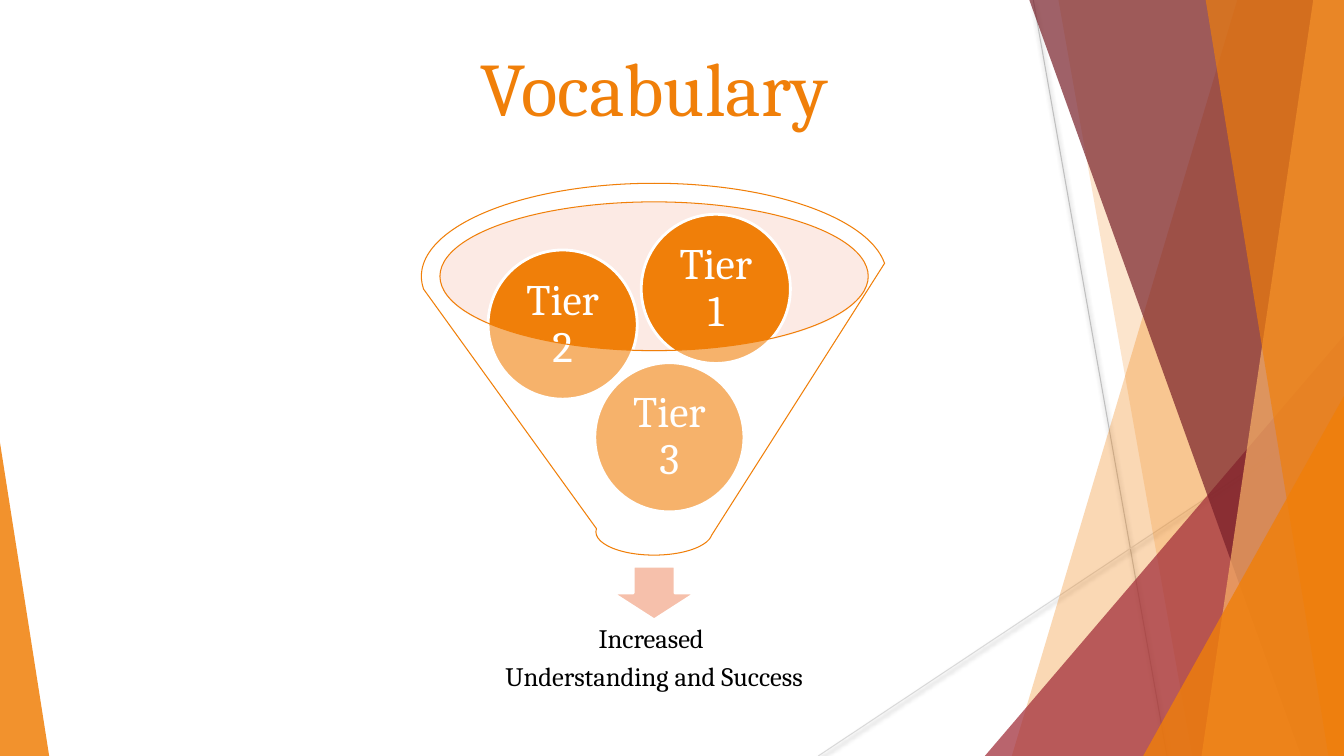
from lxml.etree import SubElement
from pptx import Presentation
from pptx.dml.color import RGBColor
from pptx.enum.shapes import MSO_CONNECTOR as LINE, MSO_SHAPE as SHAPE
from pptx.enum.text import MSO_ANCHOR as ANCHOR, PP_ALIGN as ALIGN
from pptx.oxml.ns import qn
from pptx.util import Cm, Pt

WIDTH, HEIGHT = 33.87, 19.05
FONT = "Cambria"
COLORS = {
    "orange": "F07F09", "peach": "F9B268", "red": "9F2936", "wine": "771F28",
    "blush": "F8CCBD", "arrow": "F6C0AB", "white": "FFFFFF", "black": "000000",
    "gray": "BFBFBF", "light": "D9D9D9",
}


def rgb(name):
    return RGBColor.from_string(COLORS[name])


def paint(shape, fill, alpha=100, line=None, width=2):
    shape.shadow.inherit = False
    shape.fill.solid()
    shape.fill.fore_color.rgb = rgb(fill)
    if alpha < 100:
        color = shape.fill._xPr.find(qn("a:solidFill"))[0]
        SubElement(color, qn("a:alpha")).set("val", str(alpha * 1000))
    if line:
        shape.line.color.rgb = rgb(line)
        shape.line.width = Pt(width)
    else:
        shape.line.fill.background()


def add_preset(s, kind, x, y, w, h, **look):
    sp = s.shapes.add_shape(kind, Cm(x), Cm(y), Cm(w), Cm(h))
    paint(sp, **look)
    return sp


def write(sp, lines, size, color, inset, anchor=ANCHOR.MIDDLE, spacing=0.9, after=0.35):
    tf = sp.text_frame
    frame = {"word_wrap": True, "vertical_anchor": anchor}
    frame.update({f"margin_{side}": Cm(inset) for side in ("left", "right", "top", "bottom")})
    for name, value in frame.items():
        setattr(tf, name, value)
    for i, line in enumerate(lines):
        p = tf.add_paragraph() if i else tf.paragraphs[0]
        layout = {"alignment": ALIGN.CENTER, "line_spacing": spacing,
                  "space_after": Pt(size * after)}
        for name, value in layout.items():
            setattr(p, name, value)
        r = p.add_run()
        r.text = line
        for name, value in {"name": FONT, "size": Pt(size)}.items():
            setattr(r.font, name, value)
        r.font.color.rgb = rgb(color)


def add_ray(s, x1, y1, x2, y2, color):
    ray = s.shapes.add_connector(LINE.STRAIGHT, Cm(x1), Cm(y1), Cm(x2), Cm(y2))
    ray.line.color.rgb = rgb(color)
    ray.line.width = Pt(0.75)
    effects = SubElement(ray._element.spPr, qn("a:effectLst"))
    shadow = SubElement(effects, qn("a:outerShdw"), blurRad="40000", dist="20000",
                        dir="5400000", rotWithShape="0")
    black = SubElement(shadow, qn("a:srgbClr"), val=COLORS["black"])
    SubElement(black, qn("a:alpha"), val="38000")


def add_backdrop(s, x, y, w, h):
    right, bottom = x + w, y + h

    # Thin crossing lines
    add_ray(s, x + 26.04, y, x + 29.41, bottom, "gray")
    add_ray(s, right, y + 10.24, x + 20.62, bottom, "light")

    def band(top_x, bottom_x, fill, alpha):
        points = [(right, y - 0.03), (right, bottom), (x + bottom_x, bottom)]
        outline = s.shapes.build_freeform(Cm(x + top_x), Cm(y - 0.03), scale=1.0)
        outline.add_line_segments([(Cm(px), Cm(py)) for px, py in points], close=True)
        paint(outline.convert_to_shape(), fill, alpha)

    def corner(left, cw, ch, apex, fill, alpha):
        sp = add_preset(s, SHAPE.ISOSCELES_TRIANGLE, left, bottom - ch, cw, ch,
                        fill=fill, alpha=alpha)
        sp.adjustments[0] = apex

    # Overlapping facets, back to front
    band(31.19, 25.5, "orange", 30)
    band(26.67, 30.05, "orange", 20)
    corner(right - 9.05, 9.05, 10.59, 1, "red", 72)
    band(25.93, 32.79, "wine", 70)
    band(33.1, 30.28, "peach", 70)
    band(30.38, 33.48, "orange", 65)
    corner(right - 5.06, 5.06, 9.07, 1, "orange", 80)
    corner(x, 1.24, 7.9, 0, "orange", 85)


def add_title(s, x, y, w, h):
    sp = s.shapes.add_textbox(Cm(x), Cm(y), Cm(w), Cm(h))
    write(sp, ["Vocabulary"], 54, "orange", 0.13, ANCHOR.TOP, 1.0, 0)


def add_funnel(s, x, y, w, h):
    middle = x + w / 2

    # Mouth and outlet arrow
    add_preset(s, SHAPE.OVAL, middle - 5.41, y + 0.48, 10.82, 3.76, fill="blush", alpha=40)
    add_preset(s, SHAPE.DOWN_ARROW, middle - 1.05, y + 9.65, 2.1, 1.35,
               fill="arrow", line="white")

    # Result
    sp = s.shapes.add_textbox(Cm(middle - 5.03), Cm(y + 10.74), Cm(10.06), Cm(2.51))
    write(sp, ["Increased ", "Understanding and Success"], 19, "black", 0.38)

    # Tiers
    size = 3.76
    for label, dx, dy in [("Tier 3", 4.37, 4.52), ("Tier 2", 1.68, 1.68), ("Tier 1", 5.54, 0.78)]:
        ball = add_preset(s, SHAPE.OVAL, x + dx, y + dy, size, size, fill="orange", line="white")
        write(ball, [label], 31, "white", 0.1)

    # Funnel in front
    add_preset(s, SHAPE.FUNNEL, x, y, w, h, fill="white", alpha=40, line="orange", width=0.75)


def main():
    prs = Presentation()
    prs.slide_width, prs.slide_height = Cm(WIDTH), Cm(HEIGHT)
    s = prs.slides.add_slide(prs.slide_layouts[6])
    add_backdrop(s, 0, 0, WIDTH, HEIGHT)
    add_title(s, 4.55, 0.89, 23.88, 3.66)
    add_funnel(s, 10.62, 4.62, 11.73, 9.37)
    prs.save("out.pptx")


if __name__ == "__main__":
    main()
